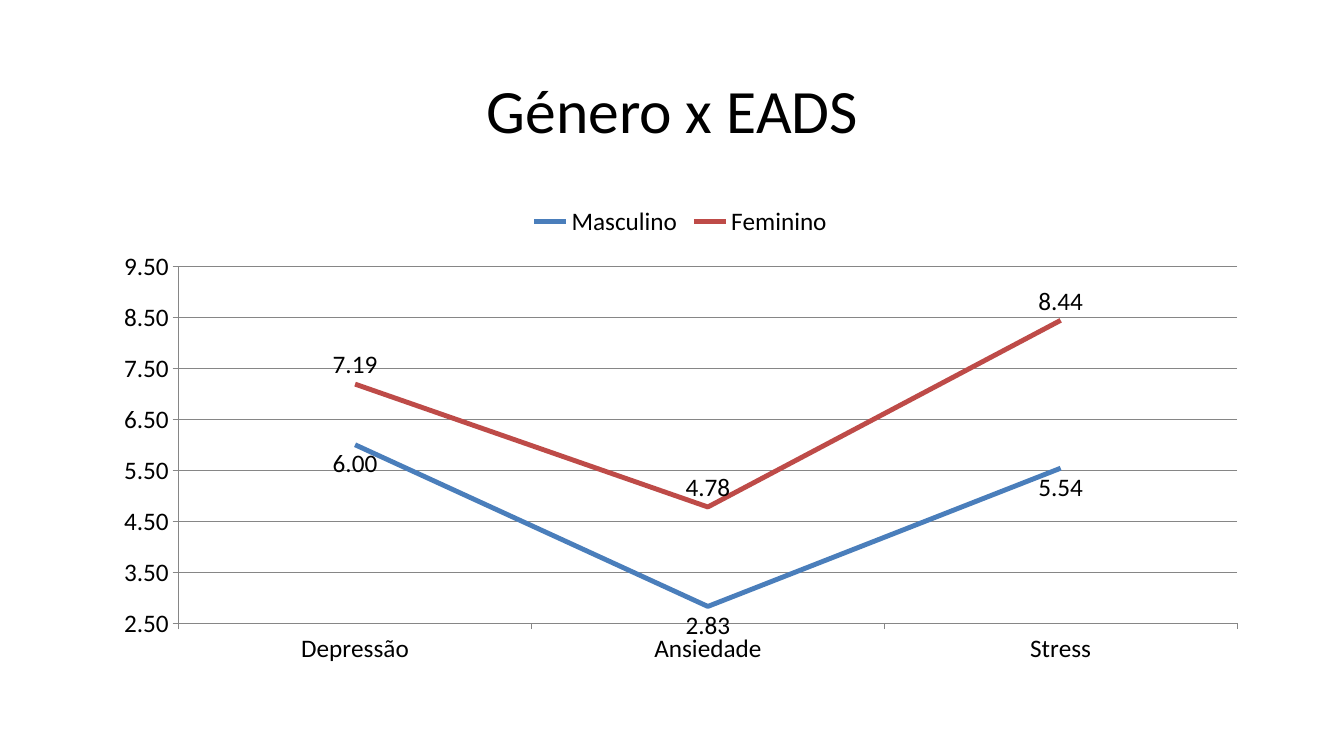
from pptx import Presentation
from pptx.chart.data import CategoryChartData as ChartData
from pptx.dml.color import RGBColor
from pptx.enum.chart import XL_CHART_TYPE as ChartType
from pptx.enum.chart import XL_LABEL_POSITION as LabelPosition
from pptx.enum.chart import XL_LEGEND_POSITION as LegendPosition
from pptx.enum.chart import XL_TICK_MARK as TickMark
from pptx.enum.text import MSO_ANCHOR, PP_ALIGN
from pptx.util import Inches, Pt

BLACK = RGBColor(0x00, 0x00, 0x00)
GREY = RGBColor(0x86, 0x86, 0x86)
BLUE = RGBColor(0x4A, 0x7E, 0xBB)
RED = RGBColor(0xBE, 0x4B, 0x48)
FONT = "Calibri"
DECIMALS = "0.00"

TITLE = "Género x EADS"
SCALES = ["Depressão", "Ansiedade", "Stress"]
GENDERS = [
    ("Masculino", (6, 2.83, 5.54), BLUE, LabelPosition.BELOW),
    ("Feminino", (7.19, 4.78, 8.44), RED, LabelPosition.ABOVE),
]


def format_font(font, size):
    font.name = FONT
    font.size = Pt(size)
    font.bold = False
    font.color.rgb = BLACK


def write_text(box, text, size=18, align=PP_ALIGN.LEFT, spacing=1.0):
    frame = box.text_frame
    frame.word_wrap = True
    frame.vertical_anchor = MSO_ANCHOR.MIDDLE
    para = frame.paragraphs[0]
    para.alignment = align
    para.line_spacing = spacing
    span = para.add_run()
    span.text = text
    format_font(span.font, size)


def format_line(line, color, width):
    line.color.rgb = color
    line.width = Pt(width)


def add_gender_chart(page):
    data = ChartData(number_format=DECIMALS)
    data.categories = SCALES
    for name, means, _, _ in GENDERS:
        data.add_series(name, means)
    chart = page.shapes.add_chart(
        ChartType.LINE, Inches(1), Inches(1.92), Inches(11.5), Inches(4.76), data
    ).chart
    format_font(chart.font, 18)
    chart.has_title = False
    chart.has_legend = True
    chart.legend.position = LegendPosition.TOP
    chart.legend.include_in_layout = False
    chart.plots[0].vary_by_categories = False

    for axis in (chart.category_axis, chart.value_axis):
        axis.major_tick_mark = TickMark.OUTSIDE
        axis.minor_tick_mark = TickMark.NONE
        format_line(axis.format.line, GREY, 0.75)
    values = chart.value_axis
    values.minimum_scale, values.maximum_scale, values.major_unit = 2.5, 9.5, 1
    values.tick_labels.number_format = DECIMALS
    values.tick_labels.number_format_is_linked = False
    values.has_major_gridlines = True
    format_line(values.major_gridlines.format.line, GREY, 0.75)

    for series, (_, _, color, position) in zip(chart.plots[0].series, GENDERS):
        series.smooth = False
        format_line(series.format.line, color, 3.5)
        labels = series.data_labels
        labels.show_value = True
        labels.position = position
        labels.number_format = DECIMALS
        labels.number_format_is_linked = False
        format_font(labels.font, 18)


def main():
    deck = Presentation()
    deck.slide_width, deck.slide_height = Inches(13.33), Inches(7.5)
    page = deck.slides.add_slide(deck.slide_layouts[5])
    title = page.shapes.title
    title.left, title.top = Inches(0.92), Inches(0.4)
    title.width, title.height = Inches(11.5), Inches(1.45)
    write_text(title, TITLE, size=44, align=PP_ALIGN.CENTER, spacing=0.9)
    add_gender_chart(page)
    deck.save("out.pptx")


if __name__ == "__main__":
    main()
